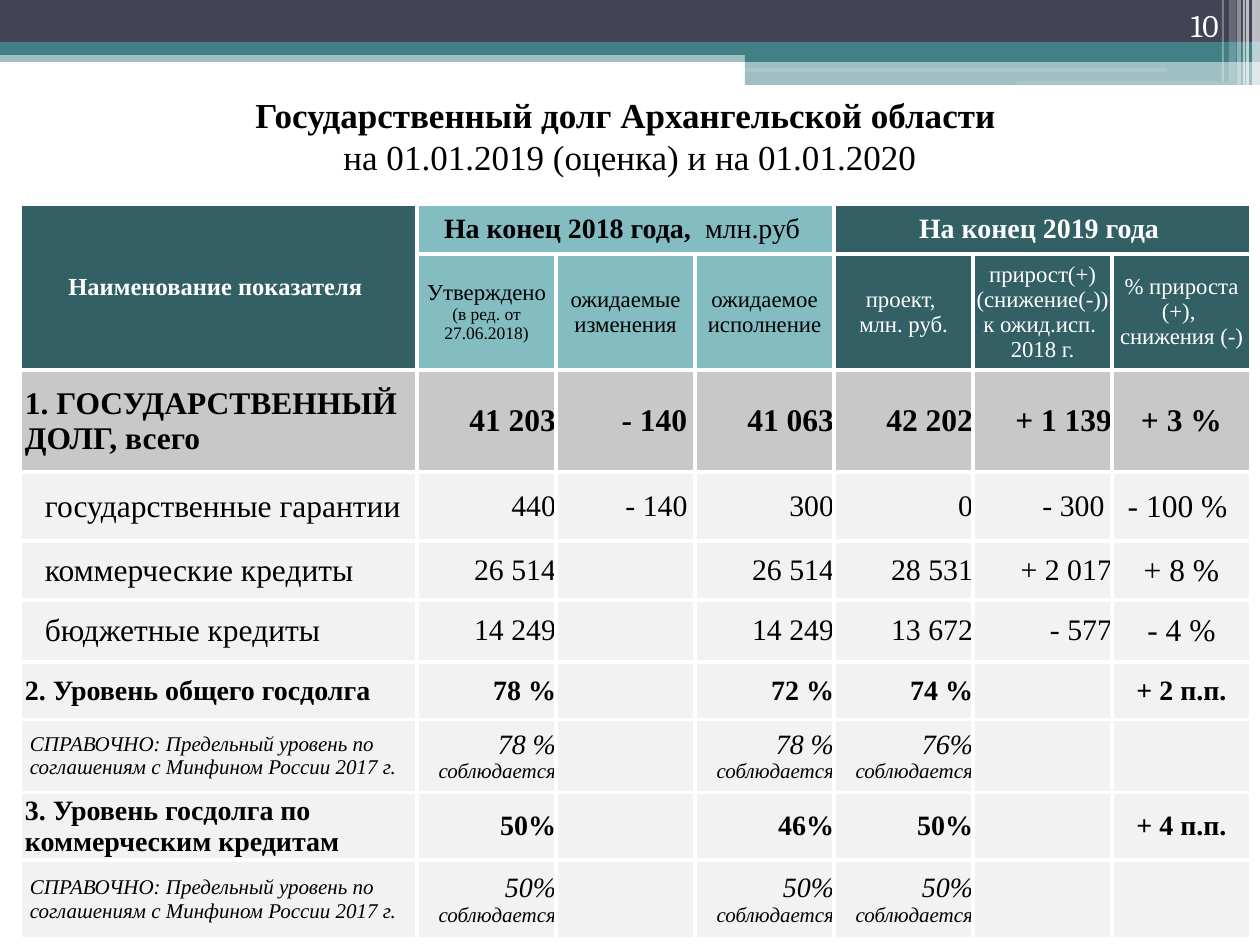
from collections import namedtuple

from lxml.etree import SubElement
from pptx import Presentation
from pptx.dml.color import RGBColor
from pptx.enum.shapes import MSO_SHAPE as Shape
from pptx.enum.text import MSO_ANCHOR as Anchor, PP_ALIGN as Align
from pptx.oxml.ns import qn
from pptx.util import Emu, Pt

PX = 914400 / 126
SERIF = "Times New Roman"
WHITE, BLACK, TEAL = "FFFFFF", "000000", "438086"
DARK, LIGHT, GREY, PALE = "326065", "83BCC1", "C8C8C8", "F2F2F2"
COLUMNS = [397] + [139] * 6
ROWS = [50, 116, 102, 69, 59, 62, 58, 73, 66, 79]
Run = namedtuple("Run", "text size bold italic", defaults=(False, False))
Row = namedtuple("Row", "label indent sizes bold italic fill values")

SUBHEADS = [
    [[Run("Утверждено", 13)], [Run("(в ред. от 27.06.2018)", 10)]],
    [[Run("ожидаемые изменения", 13)]],
    [[Run("ожидаемое исполнение", 13)]],
    [[Run("проект, ", 13)], [Run("млн. руб.", 13)]],
    [[Run("прирост(+) (снижение(-)) к ожид.исп. ", 13)], [Run("2018 г.", 13)]],
    [[Run("% прироста (+),  снижения (-)", 13)]],
]
TOTAL, ITEM, LEVEL, NOTE = (18, 18, 18), (18, 17, 18), (16, 16, 16), (12, 16, 16)
LIMIT = "СПРАВОЧНО: Предельный уровень по соглашениям с Минфином России 2017 г."
KEPT = "соблюдается"
BODY = [
    Row("1. ГОСУДАРСТВЕННЫЙ ДОЛГ, всего", 5, TOTAL, True, False, GREY,
        ["41 203", "- 140 ", "41 063", "42 202", "+ 1 139", "+ 3 %"]),
    Row("государственные гарантии", 25, ITEM, False, False, PALE,
        ["440", "- 140 ", "300", "0", "- 300 ", "- 100 % "]),
    Row("коммерческие кредиты", 25, ITEM, False, False, PALE,
        ["26 514", "", "26 514", "28 531", "+ 2 017", "+ 8 %"]),
    Row("бюджетные кредиты", 25, ITEM, False, False, PALE,
        ["14 249", "", "14 249", "13 672", "- 577", "- 4 %"]),
    Row("2. Уровень общего госдолга", 5, LEVEL, True, False, PALE,
        ["78 %", "", "72 %", "74 %", "", "+ 2 п.п."]),
    Row(LIMIT, 10, NOTE, False, True, PALE, ["78 %", "", "78 %", "76%", "", ""]),
    Row("3. Уровень госдолга по коммерческим кредитам", 5, LEVEL, True, False, PALE,
        ["50%", "", "46%", "50%", "", "+ 4 п.п."]),
    Row(LIMIT, 10, NOTE, False, True, PALE, ["50%", "", "50%", "50%", "", ""]),
]


def px(value):
    """Turn pixels into EMU."""
    return Emu(round(value * PX))


def paint(target, color):
    """Give a fill or a font a hex colour."""
    target.rgb = RGBColor.from_string(color)


def add_run(paragraph, run, color, font=SERIF):
    """Append one formatted run."""
    part = paragraph.add_run()
    part.text = run.text
    part.font.name = font
    part.font.size = Pt(run.size)
    part.font.bold = run.bold
    part.font.italic = run.italic
    paint(part.font.color, color)


def add_block(slide, box, color, alpha=100, kind=Shape.RECTANGLE):
    """Draw a borderless block with the given opacity."""
    shape = slide.shapes.add_shape(kind, *map(px, box))
    shape.shadow.inherit = False
    shape.line.fill.background()
    shape.fill.solid()
    paint(shape.fill.fore_color, color)
    if alpha < 100:
        solid = shape.fill._xPr.find(qn("a:solidFill"))
        SubElement(solid[0], qn("a:alpha"), val=str(alpha * 1000))


def add_text_box(slide, box, anchor, align):
    """Add a wrapping text box and return its first paragraph."""
    frame = slide.shapes.add_textbox(*map(px, box)).text_frame
    frame.word_wrap = True
    frame.vertical_anchor = anchor
    paragraph = frame.paragraphs[0]
    paragraph.alignment = align
    return paragraph


def add_banner(slide, left, top, width):
    """Draw the top bands, the right-hand stripes and the page number."""
    step = 745
    rest = width - step
    add_block(slide, (left, top + 50, width, 12), TEAL, 50)
    add_block(slide, (left, top, width, 43), "424456")
    add_block(slide, (left, top + 42, width, 13), TEAL)
    add_block(slide, (left + step, top + 49, rest, 13), TEAL)
    add_block(slide, (left + step, top + 61, rest, 24), TEAL, 50)
    for x, y, length, height in [(745, 68, 422, 4), (1016, 81, 220, 5)]:
        add_block(slide, (left + x, top + y, length, height), WHITE, 11,
                  Shape.ROUNDED_RECTANGLE)
    stripes = [(8, 8, 85, 65), (14, 3, 85, 65), (17, 2, 85, 60),
               (23, 4, 85, 40), (31, 7, 81, 20), (38, 2, 81, 30)]
    for offset, thickness, height, alpha in stripes:
        add_block(slide, (left + width - offset, top, thickness, height), WHITE, alpha)
    number = add_text_box(slide, (left + width - 134, top, 105, 50), Anchor.BOTTOM, Align.RIGHT)
    add_run(number, Run("10", 18), WHITE, "Cambria")


def add_title(slide, box):
    """Write the two-line heading."""
    paragraph = add_text_box(slide, box, Anchor.MIDDLE, Align.CENTER)
    add_run(paragraph, Run("Государственный долг Архангельской области ", 20, True), BLACK)
    paragraph.add_line_break()
    add_run(paragraph, Run("на 01.01.2019 (оценка) и на 01.01.2020", 20), BLACK)


def fill_cell(cell, paragraphs, fill, color=BLACK, align=Align.CENTER, indent=0):
    """Set a cell's borders, fill, margins and text."""
    properties = cell._tc.get_or_add_tcPr()
    for side in "LRTB":
        line = SubElement(properties, qn(f"a:ln{side}"), w=str(Pt(2.25)))
        solid = SubElement(line, qn("a:solidFill"))
        SubElement(solid, qn("a:srgbClr"), val=WHITE)
    cell.fill.solid()
    paint(cell.fill.fore_color, fill)
    cell.vertical_anchor = Anchor.MIDDLE
    cell.margin_left = px(indent)
    cell.margin_right = cell.margin_top = cell.margin_bottom = 0
    for index, runs in enumerate(paragraphs):
        frame = cell.text_frame
        paragraph = frame.add_paragraph() if index else frame.paragraphs[0]
        paragraph.alignment = align
        for run in runs:
            add_run(paragraph, run, color)


def fill_header(table):
    """Write the two header rows with their merged cells."""
    groups = [
        (0, 1, 0, [Run("Наименование показателя ", 14, True)], DARK, WHITE),
        (1, 0, 3, [Run("На конец 2018 года,  ", 16, True), Run("млн.руб ", 16)], LIGHT, BLACK),
        (4, 0, 6, [Run("На конец 2019 года ", 16, True)], DARK, WHITE),
    ]
    for column, last_row, last_column, runs, fill, color in groups:
        table.cell(0, column).merge(table.cell(last_row, last_column))
        fill_cell(table.cell(0, column), [runs], fill, color)
    for column, paragraphs in enumerate(SUBHEADS, 1):
        fill, color = (LIGHT, BLACK) if column < 4 else (DARK, WHITE)
        fill_cell(table.cell(1, column), paragraphs, fill, color)


def fill_row(table, index, row):
    """Write one body row: label, right-aligned values, centred change."""
    label_size, value_size, last_size = row.sizes
    label = Run(row.label, label_size, row.bold, row.italic)
    fill_cell(table.cell(index, 0), [[label]], row.fill, align=Align.LEFT, indent=row.indent)
    for column, value in enumerate(row.values, 1):
        last = column == len(row.values)
        size = last_size if last else value_size
        paragraphs = [[Run(value, size, row.bold, row.italic)]] if value else []
        if value and row.italic:
            paragraphs.append([Run(KEPT, 12, False, True)])
        fill_cell(table.cell(index, column), paragraphs, row.fill,
                  align=Align.CENTER if last else Align.RIGHT)


def add_debt_table(slide, left, top):
    """Place the public debt table."""
    box = (left, top, sum(COLUMNS), sum(ROWS))
    table = slide.shapes.add_table(len(ROWS), len(COLUMNS), *map(px, box)).table
    table.first_row = table.horz_banding = False
    for column, width in zip(table.columns, COLUMNS):
        column.width = px(width)
    for row, height in zip(table.rows, ROWS):
        row.height = px(height)
    fill_header(table)
    for index, row in enumerate(BODY, 2):
        fill_row(table, index, row)


def main():
    """Build and save the slide."""
    presentation = Presentation()
    presentation.slide_width, presentation.slide_height = px(1260), px(945)
    slide = presentation.slides.add_slide(presentation.slide_layouts[6])
    add_banner(slide, 0, 0, 1260)
    add_debt_table(slide, 20, 204)
    add_title(slide, (0, 96, 1260, 79))
    presentation.save("out.pptx")


if __name__ == "__main__":
    main()
